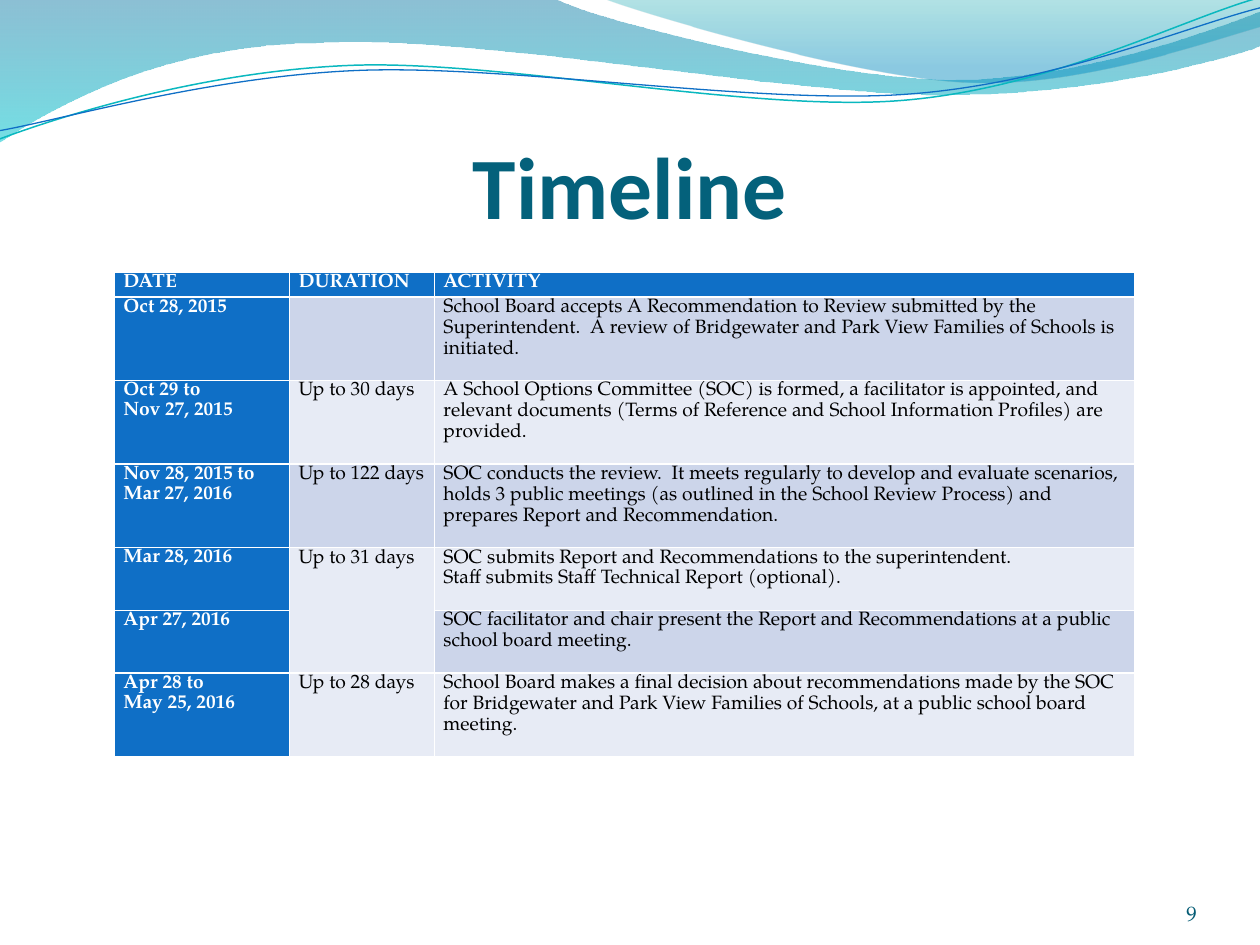
from pptx import Presentation
from pptx.dml.color import RGBColor
from pptx.enum.text import MSO_ANCHOR, PP_ALIGN
from pptx.oxml import parse_xml
from pptx.oxml.ns import nsdecls, qn
from pptx.util import Inches, Pt

WHITE = RGBColor(0xFF, 0xFF, 0xFF)
BLACK = RGBColor(0, 0, 0)
TITLE_TEAL = RGBColor(0x04, 0x61, 0x7B)
NUMBER_TEAL = RGBColor(0x04, 0x5C, 0x75)
BLUE = RGBColor(0x0F, 0x6F, 0xC6)
CYAN = RGBColor(0x0A, 0xB8, 0xBF)
BAND_DARK = RGBColor(0xCC, 0xD5, 0xEA)
BAND_LIGHT = RGBColor(0xE7, 0xEB, 0xF5)
WAVE_BLUE = RGBColor(0x00, 0x74, 0xA1)
WAVE_CYAN = RGBColor(0x00, 0xC6, 0xCF)
CREST_GREEN = RGBColor(0x00, 0xA1, 0xA9)
CREST_BLUE = RGBColor(0x00, 0x8B, 0xBF)

BODY_FONT = "TeX Gyre Pagella"
TABLE_LEFT, TABLE_TOP, TABLE_HEIGHT = 0.91, 2.16, 3.8
COLUMN_WIDTHS = (1.39, 1.15, 5.56)

# Each row: height in text lines, then date, duration, activity
ROWS = [
    (0.9, "DATE", "DURATION", "ACTIVITY"),
    (4, "Oct 28, 2015", "",
     "School Board accepts A Recommendation to Review submitted by the Superintendent.  "
     "A review of Bridgewater and Park View Families of Schools is initiated."),
    (4, "Oct 29 to\nNov 27, 2015", "Up to 30 days",
     "A School Options Committee (SOC) is formed, a facilitator is appointed, and relevant "
     "documents (Terms of Reference and School Information Profiles) are provided."),
    (4, "Nov 28, 2015 to\nMar 27, 2016", "Up to 122 days",
     "SOC conducts the review.  It meets regularly to develop and evaluate scenarios, holds "
     "3 public meetings (as outlined in the School Review Process) and prepares Report and "
     "Recommendation."),
    (3, "Mar 28, 2016", "Up to 31 days",
     "SOC submits Report and Recommendations to the superintendent.\n"
     "Staff submits Staff Technical Report (optional)."),
    (3, "Apr 27, 2016", "",
     "SOC facilitator and chair present the Report and Recommendations at a public school "
     "board meeting."),
    (4, "Apr 28 to\nMay 25, 2016", "Up to 28 days",
     "School Board makes a final decision about recommendations made by the SOC for "
     "Bridgewater and Park View Families of Schools, at a public school board meeting."),
]
SHARED_DURATION = ((4, 1), (5, 1))

# Outlines in inches: a pair is a straight step, six numbers are a cubic curve
WAVE = [
    (0, -0.01), (4.4, -0.01), (4.76, 0.17, 6.64, 0.63, 7.58, 0.63),
    (8.53, 0.63, 9.58, 0.26, 10, 0.09), (10.01, 0.36),
    (9.83, 0.44, 8.7, 0.76, 7.46, 0.75), (6.22, 0.75, 3.82, 0.28, 2.57, 0.34),
    (1.29, 0.35, 0.46, 0.83, -0.01, 1.13),
]
CREST = [
    (4.79, -0.01), (5.09, 0.11, 6.82, 0.62, 7.69, 0.65),
    (8.56, 0.69, 9.61, 0.32, 10, 0.21), (10, 0),
]
CYAN_LINE = [
    (-0.02, 1.11), (0.46, 0.93, 1.58, 0.57, 2.77, 0.52),
    (3.95, 0.47, 5.93, 0.89, 7.13, 0.8), (8.33, 0.71, 9.38, 0.15, 10, -0.02),
]
BLUE_LINE = [
    (-0.02, 1.04), (0.46, 0.96, 1.64, 0.61, 2.83, 0.56),
    (4.03, 0.51, 5.97, 0.83, 7.17, 0.75), (8.36, 0.67, 9.41, 0.21, 10.01, 0.06),
]
# Gradient stops: position, colour, opacity in percent
FILLED_WAVES = [
    (WAVE, [(0, WAVE_BLUE, 45), (100, WAVE_CYAN, 55)]),
    (CREST, [(0, CREST_GREEN, 30), (80, CREST_BLUE, 45)]),
]
WAVE_LINES = [(CYAN_LINE, CYAN, 0.85), (BLUE_LINE, BLUE, 0.75)]


def add_outline(slide, outline, close):
    """Build the outline through its end points, then bend the curved steps."""
    anchors = [tuple(map(Inches, step[-2:])) for step in outline]
    builder = slide.shapes.build_freeform(*anchors[0])
    builder.add_line_segments(anchors[1:], close=close)
    shape = builder.convert_to_shape()
    shape.shadow.inherit = False
    segments = list(shape._element.iter(qn("a:lnTo")))
    for segment, step in zip(segments, outline[1:]):
        if len(step) == 6:
            points = "".join(
                f'<a:pt x="{Inches(x) - shape.left}" y="{Inches(y) - shape.top}"/>'
                for x, y in zip(step[::2], step[1::2]))
            curve = parse_xml(f'<a:cubicBezTo {nsdecls("a")}>{points}</a:cubicBezTo>')
            segment.getparent().replace(segment, curve)
    return shape


def set_gradient(shape, stops):
    """Fill from top to bottom with partly transparent colours."""
    marks = "".join(
        f'<a:gs pos="{position * 1000}"><a:srgbClr val="{color}">'
        f'<a:alpha val="{opacity * 1000}"/></a:srgbClr></a:gs>'
        for position, color, opacity in stops)
    gradient = parse_xml(
        f'<a:gradFill {nsdecls("a")} rotWithShape="1"><a:gsLst>{marks}</a:gsLst>'
        '<a:lin ang="5400000" scaled="0"/></a:gradFill>')
    shape._element.spPr.find(qn("a:custGeom")).addnext(gradient)


def write_text(frame, text, size, color, font=BODY_FONT, bold=False,
               align=PP_ALIGN.LEFT, line_spacing=None):
    frame.word_wrap = True
    for index, line in enumerate(text.split("\n")):
        paragraph = frame.add_paragraph() if index else frame.paragraphs[0]
        paragraph.alignment = align
        paragraph.line_spacing = line_spacing
        run = paragraph.add_run()
        run.text = line
        run.font.name, run.font.size, run.font.bold = font, Pt(size), bold
        run.font.color.rgb = color


def add_text_box(slide, box, text, **text_format):
    frame = slide.shapes.add_textbox(*map(Inches, box)).text_frame
    frame.margin_left = frame.margin_right = frame.margin_top = frame.margin_bottom = 0
    frame.vertical_anchor = MSO_ANCHOR.BOTTOM
    write_text(frame, text, **text_format)
    return frame


def add_timeline(slide):
    """Add the table; its default style supplies the white rules."""
    line_height = TABLE_HEIGHT / sum(row[0] for row in ROWS)
    table = slide.shapes.add_table(
        len(ROWS), len(COLUMN_WIDTHS), Inches(TABLE_LEFT), Inches(TABLE_TOP),
        Inches(sum(COLUMN_WIDTHS)), Inches(TABLE_HEIGHT)).table
    table.first_col = True
    for column, width in zip(table.columns, COLUMN_WIDTHS):
        column.width = Inches(width)
    for row_index, (lines, *texts) in enumerate(ROWS):
        table.rows[row_index].height = Inches(lines * line_height)
        for column_index, text in enumerate(texts):
            cell = table.cell(row_index, column_index)
            heading = row_index == 0 or column_index == 0
            cell.margin_left = cell.margin_right = Inches(0.07)
            cell.margin_top = cell.margin_bottom = 0
            cell.fill.solid()
            band = BAND_DARK if row_index % 2 else BAND_LIGHT
            cell.fill.fore_color.rgb = BLUE if heading else band
            if text:
                write_text(cell.text_frame, text, size=11, bold=heading,
                           color=WHITE if heading else BLACK, line_spacing=1.07)
    first, last = SHARED_DURATION
    table.cell(*first).merge(table.cell(*last))


def main():
    presentation = Presentation()
    presentation.slide_width, presentation.slide_height = Inches(10), Inches(7.5)
    slide = presentation.slides.add_slide(presentation.slide_layouts[6])
    for outline, stops in FILLED_WAVES:
        shape = add_outline(slide, outline, close=True)
        set_gradient(shape, stops)
        shape.line.fill.background()
    for outline, color, width in WAVE_LINES:
        shape = add_outline(slide, outline, close=False)
        shape.fill.background()
        shape.line.color.rgb = color
        shape.line.width = Pt(width)
    title = add_text_box(slide, (0.5, 0.77, 9, 1.11), "Timeline", size=50, color=TITLE_TEAL,
                         font="Calibri", bold=True, align=PP_ALIGN.CENTER)
    title.margin_top = Inches(0.05)
    add_timeline(slide)
    add_text_box(slide, (8.67, 6.95, 0.83, 0.4), "9", size=12, color=NUMBER_TEAL,
                 align=PP_ALIGN.RIGHT)
    presentation.save("out.pptx")


if __name__ == "__main__":
    main()
